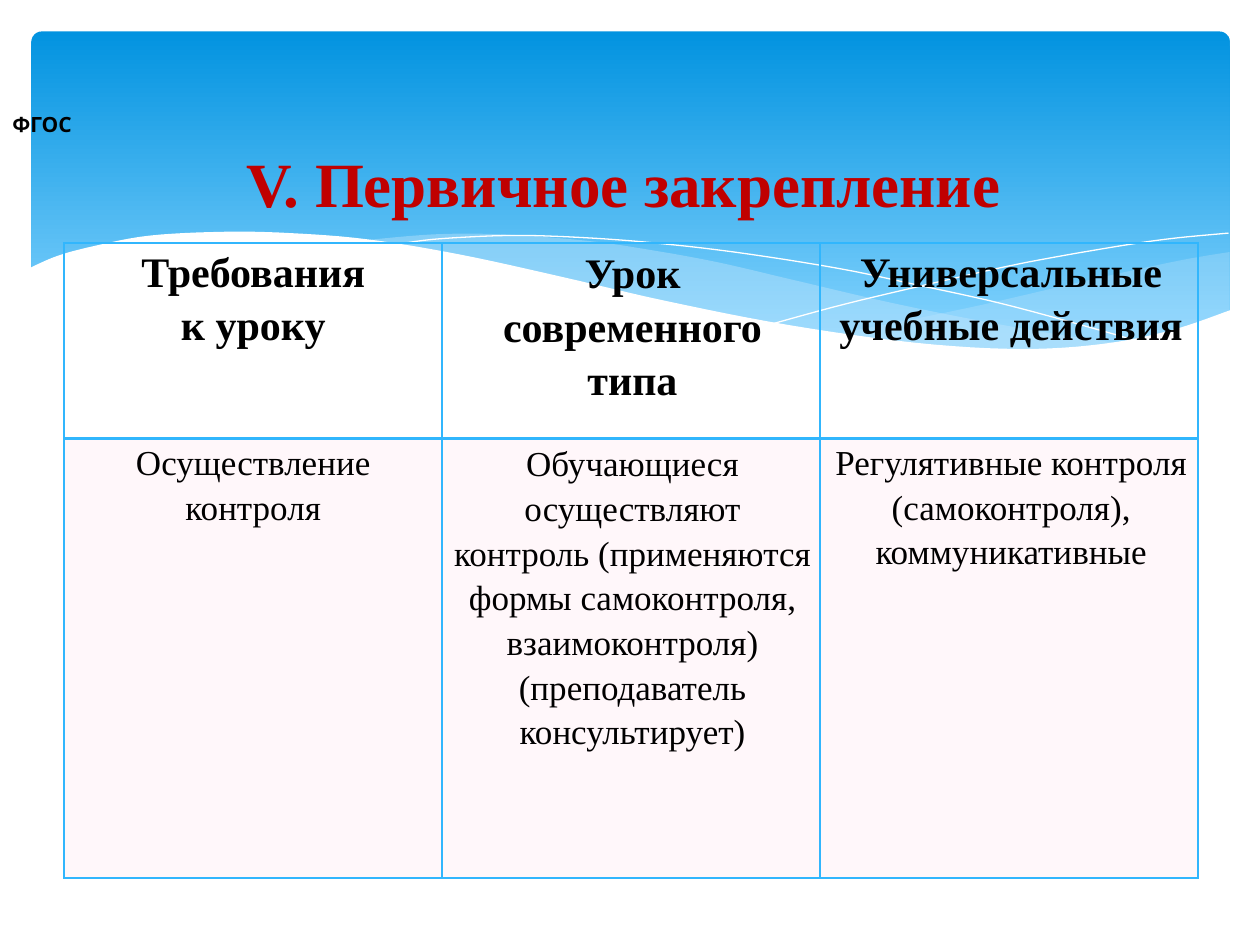
from dataclasses import dataclass

from lxml import etree
from pptx import Presentation
from pptx.dml.color import RGBColor
from pptx.enum.shapes import MSO_SHAPE
from pptx.enum.text import MSO_ANCHOR, PP_ALIGN
from pptx.oxml.ns import qn
from pptx.util import Emu, Pt

PX = 9144
SLIDE_W, SLIDE_H = 1000, 750
CURVE_STEPS = 6

ROUND_RECT = MSO_SHAPE.ROUNDED_RECTANGLE
CENTER, LEFT = PP_ALIGN.CENTER, PP_ALIGN.LEFT
MIDDLE, TOP = MSO_ANCHOR.MIDDLE, MSO_ANCHOR.TOP

SKY_DARK = RGBColor(0x02, 0x93, 0xE0)
SKY_LIGHT = RGBColor(0x83, 0xD3, 0xFE)
WAVE_BLUE = RGBColor(0xC6, 0xE7, 0xFC)
GRID_BLUE = RGBColor(0x31, 0xB6, 0xFD)
PINK = RGBColor(0xFF, 0xD7, 0xE8)
TITLE_RED = RGBColor(0xC0, 0x00, 0x00)
WHITE = RGBColor(0xFF, 0xFF, 0xFF)
BLACK = RGBColor(0x00, 0x00, 0x00)
SERIF, SANS = "Times New Roman", "Cabin"

Points = list[tuple[float, float]]


@dataclass(frozen=True)
class Wave:
    curves: tuple[Points, ...]
    opacity: int = 100
    color: RGBColor = WAVE_BLUE
    outlined: bool = False


@dataclass(frozen=True)
class TextStyle:
    size: int
    font: str = SERIF
    color: RGBColor = BLACK
    bold: bool = False


@dataclass(frozen=True)
class Column:
    heading: tuple[str, str]
    body: str
    margins: tuple[int, int, int, int]
    indent: int


WAVES = (
    Wave(([(976, 200), (935, 207), (861, 223), (779, 242), (706, 257), (661, 265)],
          [(661, 265), (705, 271), (757, 276), (803, 278), (844, 277), (889, 272),
           (928, 263), (976, 247)]), 29),
    Wave(([(893, 273), (837, 265), (775, 254), (706, 240), (629, 222), (569, 208),
           (514, 198), (465, 191), (399, 186), (344, 186), (286, 191)],
          [(286, 191), (342, 199), (404, 211), (449, 222), (530, 240), (601, 255),
           (665, 266), (722, 274), (773, 277), (818, 278), (857, 277), (893, 273)]), 40),
    Wave(([(309, 195), (344, 190), (401, 187), (450, 188), (510, 192), (582, 200),
           (665, 213), (727, 226), (795, 241), (869, 261), (907, 272)],), outlined=True),
    Wave(([(613, 257), (672, 241), (748, 223), (806, 210), (866, 199), (924, 190),
           (975, 185)],), outlined=True),
    Wave(([(977, 246), (930, 262), (875, 273), (809, 277), (726, 272), (626, 258),
           (529, 239), (447, 220), (365, 202), (292, 190), (230, 185), (177, 184),
           (119, 187), (76, 195), (46, 203), (23, 213)],
          [(23, 213), (23, 329)], [(23, 329), (977, 329)]), color=WHITE),
)

COLUMNS = (
    Column(("Требования", "к уроку"), "Осуществление контроля", (0, 0, 0, 0), 0),
    Column(("Урок", "современного типа"),
           "Обучающиеся осуществляют контроль (применяются формы самоконтроля, "
           "взаимоконтроля) (преподаватель консультирует)", (7, 1, 7, 0), 2),
    Column(("Универсальные", "учебные действия"),
           "Регулятивные контроля (самоконтроля), коммуникативные", (0, 0, 0, 0), 3),
)
COLUMN_W = 300
ROW_HEIGHTS = (155, 349)
HEADING_STYLE = TextStyle(24, bold=True)
BODY_STYLE = TextStyle(20)


def px(value: float) -> Emu:
    return Emu(round(value * PX))


def set_opacity(properties, percent: int) -> None:
    color = properties.find(qn("a:solidFill")).find(qn("a:srgbClr"))
    etree.SubElement(color, qn("a:alpha")).set("val", str(percent * 1000))


def smooth(knots: Points) -> Points:
    padded = [knots[0], *knots, knots[-1]]
    result = [knots[0]]
    for a, b, c, d in zip(padded, padded[1:], padded[2:], padded[3:]):
        for step in range(1, CURVE_STEPS + 1):
            t = step / CURVE_STEPS
            result.append(tuple(
                (2 * q + (r - p) * t + (2 * p - 5 * q + 4 * r - s) * t ** 2
                 + (3 * q - p - 3 * r + s) * t ** 3) / 2
                for p, q, r, s in zip(a, b, c, d)))
    return result


def add_wave(shapes, wave: Wave) -> None:
    outline = [(px(x), px(y)) for curve in wave.curves for x, y in smooth(curve)]
    builder = shapes.build_freeform(*outline[0], scale=1.0)
    builder.add_line_segments(outline[1:], close=not wave.outlined)
    shape = builder.convert_to_shape()
    shape.shadow.inherit = False
    if wave.outlined:
        shape.fill.background()
        shape.line.color.rgb = WHITE
        shape.line.width = Pt(0)
        return
    shape.fill.solid()
    shape.fill.fore_color.rgb = wave.color
    shape.line.fill.background()
    if wave.opacity < 100:
        set_opacity(shape._element.spPr, wave.opacity)


def add_sky(shapes) -> None:
    sky = shapes.add_shape(ROUND_RECT, px(25), px(25), px(951), px(270))
    sky.adjustments[0] = 0.03
    sky.shadow.inherit = False
    sky.line.fill.background()
    sky.fill.gradient()
    sky.fill.gradient_angle = 270
    stops = ((0, SKY_DARK), (0.9, SKY_LIGHT))
    for stop, (position, color) in zip(sky.fill.gradient_stops, stops):
        stop.position = position
        stop.color.rgb = color


def add_run(paragraph, text: str, style: TextStyle) -> None:
    run = paragraph.add_run()
    run.text = text
    run.font.size = Pt(style.size)
    run.font.name = style.font
    run.font.bold = style.bold
    run.font.color.rgb = style.color


def add_label(shapes, box: tuple[int, int, int, int], anchor, align,
              runs: tuple[tuple[str, TextStyle], ...]) -> None:
    frame = shapes.add_textbox(*map(px, box)).text_frame
    frame.word_wrap = True
    frame.vertical_anchor = anchor
    frame.paragraphs[0].alignment = align
    for text, style in runs:
        add_run(frame.paragraphs[0], text, style)


def set_borders(cell, widths: dict[str, int]) -> None:
    properties = cell._tc.get_or_add_tcPr()
    for index, (side, width) in enumerate(widths.items()):
        border = etree.Element(qn(f"a:ln{side}"), w=str(Pt(width)))
        fill = etree.SubElement(border, qn("a:solidFill"))
        etree.SubElement(fill, qn("a:srgbClr")).set("val", str(GRID_BLUE))
        properties.insert(index, border)


def fill_cell(cell, column: Column, lines: tuple[str, ...], style: TextStyle) -> None:
    (cell.margin_left, cell.margin_top,
     cell.margin_right, cell.margin_bottom) = map(px, column.margins)
    for index, line in enumerate(lines):
        frame = cell.text_frame
        paragraph = frame.add_paragraph() if index else frame.paragraphs[0]
        paragraph.alignment = CENTER
        paragraph.line_spacing = 1.15
        paragraph._p.get_or_add_pPr().set("marL", str(px(column.indent)))
        add_run(paragraph, line, style)


def add_requirements(shapes) -> None:
    table = shapes.add_table(len(ROW_HEIGHTS), len(COLUMNS), px(51), px(193),
                             px(COLUMN_W * len(COLUMNS)), px(sum(ROW_HEIGHTS))).table
    table.first_row = table.horz_banding = False
    for row, height in zip(table.rows, ROW_HEIGHTS):
        row.height = px(height)
    for index, column in enumerate(COLUMNS):
        table.columns[index].width = px(COLUMN_W)
        heading, body = table.cell(0, index), table.cell(1, index)
        fill_cell(heading, column, column.heading, HEADING_STYLE)
        heading.fill.background()
        set_borders(heading, {"L": 1, "R": 1, "T": 1, "B": 2})
        fill_cell(body, column, (column.body,), BODY_STYLE)
        body.fill.solid()
        body.fill.fore_color.rgb = PINK
        set_opacity(body._tc.tcPr, 20)
        set_borders(body, {"L": 1, "R": 1, "T": 2, "B": 1})


def main() -> None:
    deck = Presentation()
    deck.slide_width, deck.slide_height = px(SLIDE_W), px(SLIDE_H)
    shapes = deck.slides.add_slide(deck.slide_layouts[6]).shapes
    add_sky(shapes)
    for wave in WAVES:
        add_wave(shapes, wave)
    add_label(shapes, (75, 109, 852, 71), MIDDLE, CENTER,
              (("V. Первичное закрепление ", TextStyle(36, color=TITLE_RED, bold=True)),))
    add_label(shapes, (0, 78, 70, 37), TOP, LEFT,
              (("ФГОС", TextStyle(12, SANS, bold=True)), (" ", TextStyle(16, SANS))))
    add_requirements(shapes)
    deck.save("out.pptx")


if __name__ == "__main__":
    main()
